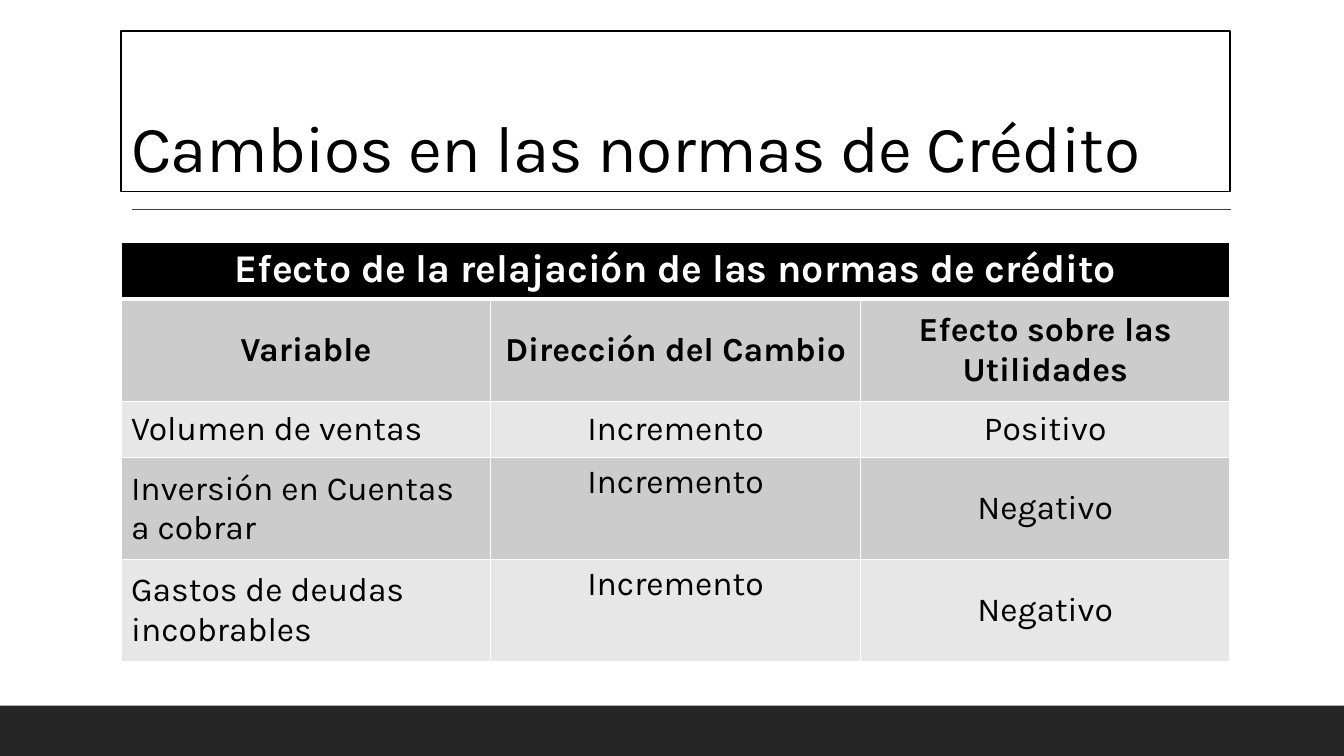
import pptx
import pptx.util
import pptx.dml.color
import pptx.enum.dml
import pptx.enum.shapes
import pptx.enum.text
import pptx.oxml
import pptx.oxml.ns

Inches = pptx.util.Inches
Pt = pptx.util.Pt
Align = pptx.enum.text.PP_ALIGN
Anchor = pptx.enum.text.MSO_ANCHOR

TITLE = "Cambios en las normas de Crédito"
TABLE_TITLE = "Efecto de la relajación de las normas de crédito"
HEADINGS = ("Variable", "Dirección del Cambio", "Efecto sobre las Utilidades")
EFFECTS = [
    ("Volumen de ventas", "Incremento", "Positivo"),
    ("Inversión en Cuentas a cobrar", "Incremento", "Negativo"),
    ("Gastos de deudas incobrables", "Incremento", "Negativo"),
]
ROW_HEIGHTS = (0.57, 1.01, 0.56, 1.01, 1.01)
LEFT, WIDTH = 1.2, 11
TABLE_TOP = 2.4

THEME = {
    "font": "Karla",
    "black": "000000",
    "white": "FFFFFF",
    "footer": "262626",
    "rule": "404040",
    "bands": ("E7E7E7", "CCCCCC"),
    "title_size": 47,
    "table_title_size": 28,
    "cell_size": 24,
}


def color(name):
    return pptx.dml.color.RGBColor.from_string(name)


def paint(target, name):
    target.fill.solid()
    target.fill.fore_color.rgb = color(name)


def write(para, text, size, ink, bold=False):
    span = para.add_run()
    span.text = text
    formats = {"name": THEME["font"], "size": Pt(size), "bold": bold}
    for key, value in formats.items():
        setattr(span.font, key, value)
    span.font.color.rgb = color(ink)
    return span


def add_borders(cell, top, bottom):
    properties = cell._tc.get_or_add_tcPr()
    for side, points in (("L", 1), ("R", 1), ("T", top), ("B", bottom)):
        properties.append(pptx.oxml.parse_xml(
            f'<a:ln{side} {pptx.oxml.ns.nsdecls("a")} w="{Pt(points)}">'
            f'<a:solidFill><a:srgbClr val="{THEME["white"]}"/></a:solidFill>'
            f'</a:ln{side}>'))


def add_frame(page):
    footer = page.shapes.add_shape(
        pptx.enum.shapes.MSO_SHAPE.RECTANGLE,
        Inches(0), Inches(7), Inches(13.33), Inches(0.5))
    footer.shadow.inherit = False
    paint(footer, THEME["footer"])
    footer.line.fill.background()
    rule = page.shapes.add_connector(
        pptx.enum.shapes.MSO_CONNECTOR.STRAIGHT,
        Inches(1.31), Inches(2.08), Inches(12.21), Inches(2.08))
    rule.line.color.rgb = color(THEME["rule"])
    rule.line.width = Pt(1)
    rule._element.spPr.append(pptx.oxml.parse_xml(
        f'<a:effectLst {pptx.oxml.ns.nsdecls("a")}/>'))


def add_title(page):
    title = page.shapes.title
    place = {"left": LEFT, "top": 0.31, "width": WIDTH, "height": 1.59}
    for key, value in place.items():
        setattr(title, key, Inches(value))
    paint(title, THEME["white"])
    title.line.color.rgb = color(THEME["black"])
    title.line.width = Pt(1.25)
    frame = title.text_frame
    formats = {
        "word_wrap": True,
        "auto_size": pptx.enum.text.MSO_AUTO_SIZE.NONE,
        "vertical_anchor": Anchor.BOTTOM,
    }
    for key, value in formats.items():
        setattr(frame, key, value)
    para = frame.paragraphs[0]
    para.alignment = Align.LEFT
    para.line_spacing = 0.9
    span = write(para, TITLE, THEME["title_size"], THEME["black"])
    span.font._element.set("spc", "-50")


def add_effects_table(page):
    rows = [(TABLE_TITLE, "", ""), HEADINGS, *EFFECTS]
    table = page.shapes.add_table(
        len(rows), len(HEADINGS), Inches(LEFT), Inches(TABLE_TOP),
        Inches(WIDTH), Inches(sum(ROW_HEIGHTS))).table
    table.horz_banding = False
    for column in table.columns:
        column.width = Inches(WIDTH / len(HEADINGS))
    for row, height in zip(table.rows, ROW_HEIGHTS):
        row.height = Inches(height)
    table.cell(0, 0).merge(table.cell(0, len(HEADINGS) - 1))
    for row_index, texts in enumerate(rows):
        is_title = row_index == 0
        fill = THEME["black"] if is_title else THEME["bands"][row_index % 2]
        ink = THEME["white"] if is_title else THEME["black"]
        size = THEME["table_title_size" if is_title else "cell_size"]
        for column_index, text in enumerate(texts):
            cell = table.cell(row_index, column_index)
            add_borders(cell, 3 if row_index == 1 else 1, 3 if is_title else 1)
            paint(cell, fill)
            raised = is_title or (row_index > 2 and column_index == 1)
            cell.vertical_anchor = Anchor.TOP if raised else Anchor.MIDDLE
            para = cell.text_frame.paragraphs[0]
            is_label = row_index > 1 and column_index == 0
            para.alignment = Align.LEFT if is_label else Align.CENTER
            if text:
                write(para, text, size, ink, bold=row_index < 2)


def main():
    deck = pptx.Presentation()
    deck.slide_width = Inches(13.33)
    deck.slide_height = Inches(7.5)
    page = deck.slides.add_slide(deck.slide_layouts[5])
    add_frame(page)
    add_title(page)
    add_effects_table(page)
    deck.save("out.pptx")


if __name__ == "__main__":
    main()
